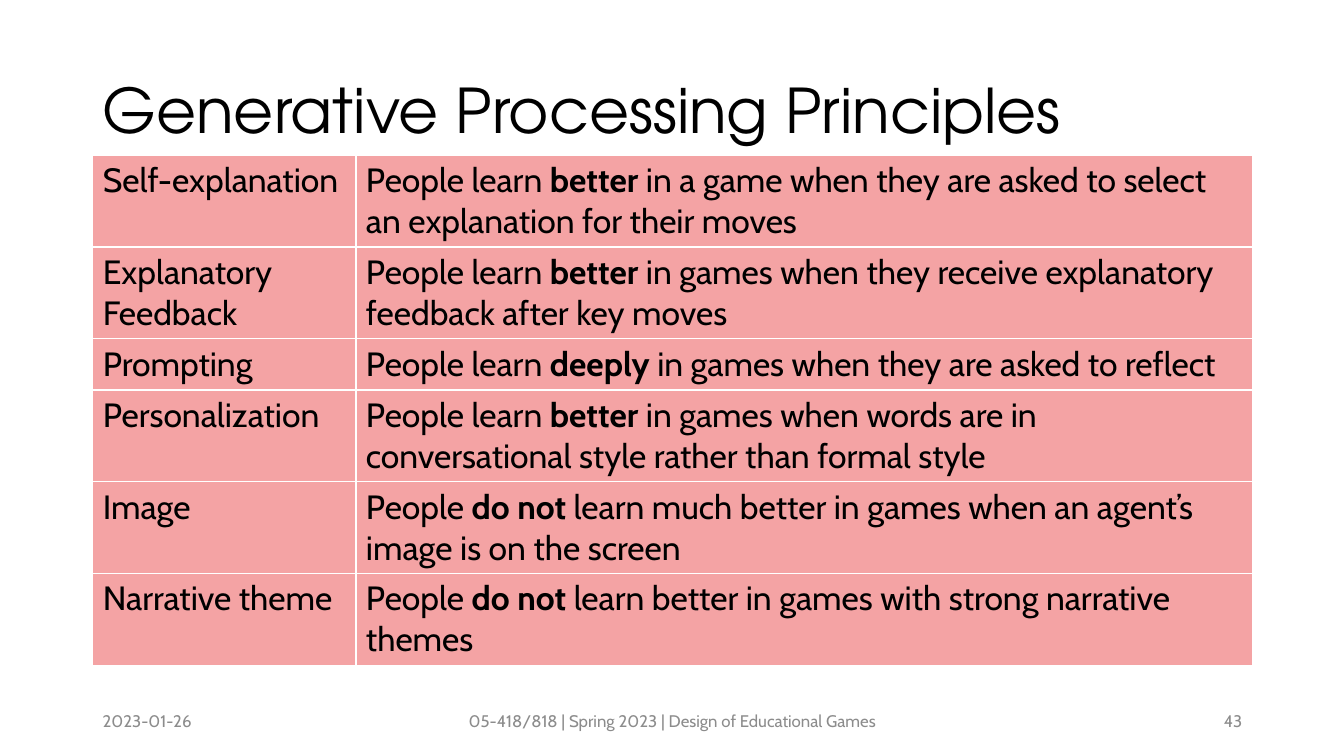
from dataclasses import dataclass

from lxml import etree
from pptx import Presentation
from pptx import util as u
from pptx.dml import color
from pptx.enum import text
from pptx.oxml import ns


@dataclass(frozen=True)
class Theme:
    ink: str = "000000"
    gray: str = "8C8C8C"
    pink: str = "F4A3A4"
    line: str = "FFFFFF"
    head: str = "TeX Gyre Adventor"
    body: str = "Cabin"
    large: int = 44
    mid: int = 24
    small: int = 12


LEFT = text.PP_ALIGN.LEFT
MID = text.PP_ALIGN.CENTER
RIGHT = text.PP_ALIGN.RIGHT

RULES = [
    ("Self-explanation", 91, "People learn ", "better",
     " in a game when they are asked to select an explanation for their moves"),
    ("Explanatory Feedback", 91, "People learn ", "better",
     " in games when they receive explanatory feedback after key moves"),
    ("Prompting", 51, "People learn ", "deeply",
     " in games when they are asked to reflect"),
    ("Personalization", 91, "People learn ", "better",
     " in games when words are in conversational style rather than formal style"),
    ("Image", 91, "People ", "do not",
     " learn much better in games when an agent’s image is on the screen"),
    ("Narrative theme", 91, "People ", "do not ",
     "learn better in games with strong narrative themes"),
]

FOOT = [
    (92, 300, "2023-01-26", LEFT),
    (442, 450, "05-418/818 | Spring 2023 | Design of Educational Games", MID),
    (942, 300, "43", RIGHT),
]


class Deck:
    def __init__(self, theme):
        self.theme = theme
        self.file = Presentation()
        self.file.slide_width = self.px(1333)
        self.file.slide_height = self.px(750)
        self.slide = self.file.slides.add_slide(self.file.slide_layouts[6])

    def px(self, count):
        return u.Emu(count * 9144)

    def put(self, thing, style):
        for key, value in style.items():
            setattr(thing, key, value)

    def run(self, para, words, face, size, tint, bold=False):
        run = para.add_run()
        run.text = words
        self.put(run.font, {"name": face, "size": u.Pt(size), "bold": bold})
        run.font.color.rgb = color.RGBColor.from_string(tint)

    def label(self, box, words, face, size, tint, style):
        frame = self.slide.shapes.add_textbox(*map(self.px, box)).text_frame
        self.put(frame, {"word_wrap": True,
                         "vertical_anchor": text.MSO_ANCHOR.MIDDLE})
        para = frame.paragraphs[0]
        self.put(para, style)
        self.run(para, words, face, size, tint)

    def edge(self, cell):
        props = cell._tc.get_or_add_tcPr()
        for spot, side in enumerate(("lnL", "lnR", "lnT", "lnB")):
            line = etree.Element(ns.qn("a:" + side), w=str(u.Pt(1)))
            fill = etree.SubElement(line, ns.qn("a:solidFill"))
            etree.SubElement(fill, ns.qn("a:srgbClr"), val=self.theme.line)
            props.insert(spot, line)

    def cell(self, cell, parts):
        look = self.theme
        cell.fill.solid()
        cell.fill.fore_color.rgb = color.RGBColor.from_string(look.pink)
        self.edge(cell)
        para = cell.text_frame.paragraphs[0]
        for spot, words in enumerate(parts):
            self.run(para, words, look.body, look.mid, look.ink, spot == 1)

    def table(self, left, top, wide, rules):
        high = sum(rule[1] for rule in rules)
        box = map(self.px, (left, top, sum(wide), high))
        grid = self.slide.shapes.add_table(len(rules), len(wide), *box).table
        self.put(grid, {"first_row": False, "horz_banding": False})
        for column, width in zip(grid.columns, wide):
            column.width = self.px(width)
        for row, (name, tall, *parts) in zip(grid.rows, rules):
            row.height = self.px(tall)
            self.cell(row.cells[0], [name])
            self.cell(row.cells[1], parts)


def main():
    look = Theme()
    deck = Deck(look)
    deck.label((92, 40, 1150, 145), "Generative Processing Principles",
               look.head, look.large, look.ink, {"line_spacing": 0.9})
    deck.table(92, 154, (261, 889), RULES)
    for left, width, words, side in FOOT:
        deck.label((left, 695, width, 40), words, look.body, look.small,
                   look.gray, {"alignment": side})
    deck.file.save("out.pptx")


if __name__ == "__main__":
    main()
